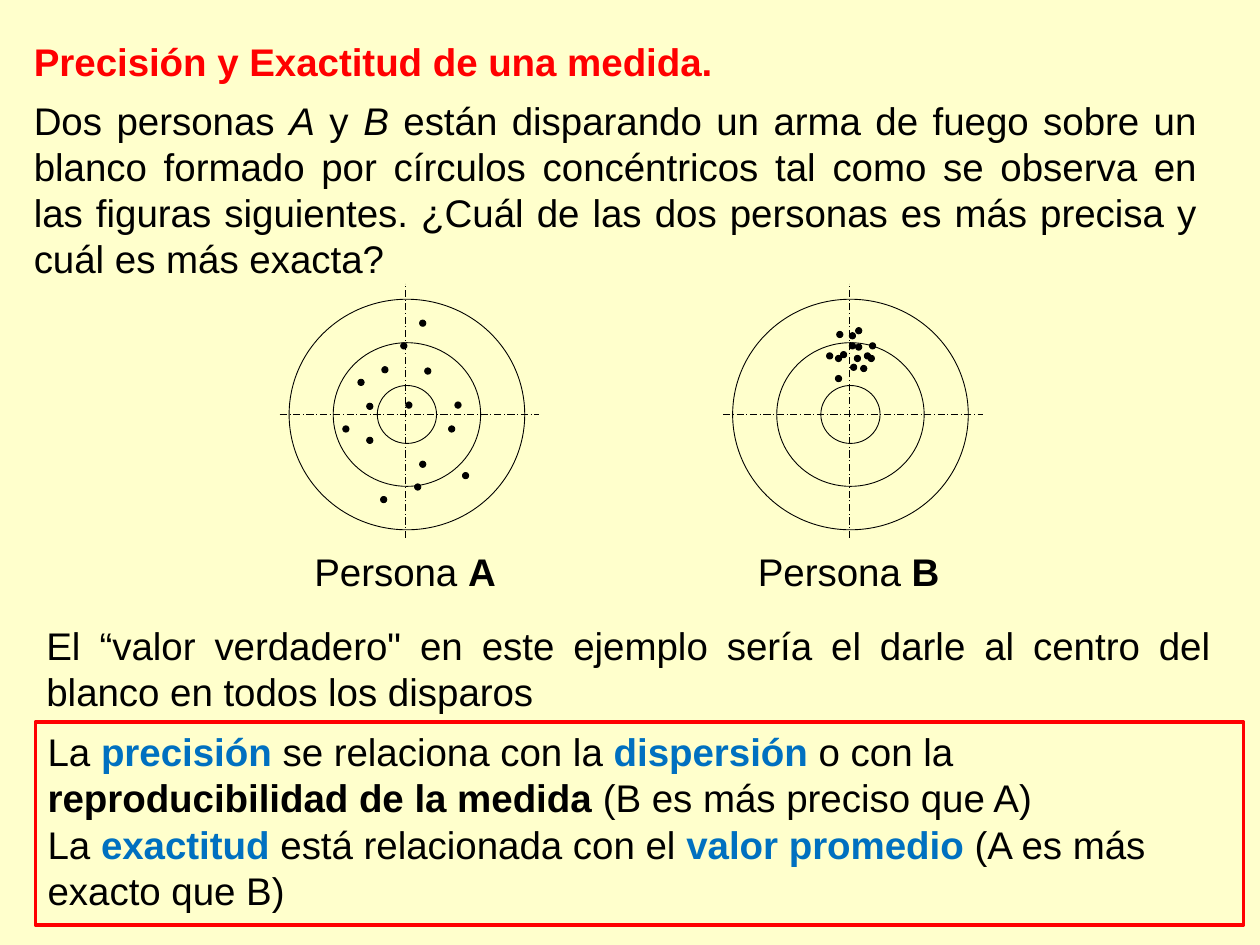
from lxml.etree import SubElement
from pptx import Presentation
from pptx.dml.color import RGBColor
from pptx.enum.dml import MSO_LINE_DASH_STYLE as Dash
from pptx.enum.shapes import MSO_CONNECTOR_TYPE as Connector, MSO_SHAPE as Shape
from pptx.enum.text import MSO_AUTO_SIZE as AutoSize, PP_ALIGN as Align
from pptx.oxml.ns import qn
from pptx.util import Inches, Pt

COLORS = {"paper": "FFFFCC", "ink": "000000", "red": "FF0000", "blue": "0070C0"}
PLAIN, BOLD, ITALIC = ("ink", False, False), ("ink", True, False), ("ink", False, True)
TITLE, KEY = ("red", True, False), ("blue", True, False)

INTRO = [
    ("Dos personas ", PLAIN), ("A", ITALIC), (" y ", PLAIN), ("B", ITALIC),
    (" están disparando un arma de fuego sobre un blanco formado por círculos "
     "concéntricos tal como se observa en las figuras siguientes. ¿Cuál de las dos "
     "personas es más precisa y cuál es más exacta?", PLAIN),
]
TRUE_VALUE = [("El “valor verdadero\" en este ejemplo sería el darle al centro del "
               "blanco en todos los disparos", PLAIN)]
CONCLUSIONS = [
    [("La ", PLAIN), ("precisión ", KEY), ("se relaciona con la ", PLAIN),
     ("dispersión ", KEY), ("o con la ", PLAIN),
     ("reproducibilidad de la medida ", BOLD), ("(B es más preciso que A)", PLAIN)],
    [("La ", PLAIN), ("exactitud", KEY), (" está relacionada con el ", PLAIN),
     ("valor promedio ", KEY), ("(A es más exacto que B)", PLAIN)],
]
SHOTS_A = [
    (1.00, 0.94), (1.39, 0.94), (1.34, 1.13), (1.11, 1.41), (1.07, 1.59),
    (1.45, 1.50), (0.80, 1.69), (0.69, 1.22), (0.50, 1.13), (0.69, 0.95),
    (0.62, 0.76), (0.81, 0.66), (0.96, 0.47), (1.15, 0.67), (1.11, 0.29),
]
SHOTS_B = [
    (0.89, 0.73), (1.01, 0.64), (1.09, 0.65), (1.04, 0.57), (0.89, 0.57),
    (0.82, 0.55), (0.93, 0.54), (1.12, 0.55), (1.15, 0.57), (1.16, 0.47),
    (1.05, 0.48), (1.00, 0.47), (1.00, 0.39), (1.05, 0.35), (0.90, 0.38),
]
RINGS = [(0.47, 0.46), (1.17, 1.14), (1.87, 1.83)]
CENTER_X, CENTER_Y = 1.01, 1.04
AXIS_WIDTH, AXIS_HEIGHT = 2.06, 2.02
SHOT_SIZE = 0.05


def color(name):
    """Return the named palette colour."""
    return RGBColor.from_string(COLORS[name])


def add_text(shapes, left, top, width, height, paragraphs, align=Align.LEFT, inset=True):
    """Place a text box built from paragraphs of styled runs."""
    box = shapes.add_textbox(Inches(left), Inches(top), Inches(width), Inches(height))
    frame = box.text_frame
    frame.word_wrap = True
    if inset:
        frame.auto_size = AutoSize.SHAPE_TO_FIT_TEXT
    else:
        frame.margin_left = frame.margin_right = 0
        frame.margin_top = frame.margin_bottom = 0
    for index, runs in enumerate(paragraphs):
        para = frame.add_paragraph() if index else frame.paragraphs[0]
        para.alignment = align
        for text, (ink, bold, italic) in runs:
            span = para.add_run()
            span.text = text
            font = span.font
            font.name, font.size = "Arial", Pt(22)
            font.bold, font.italic = bold, italic
            font.color.rgb = color(ink)


def add_outline(shapes, kind, left, top, width, height, ink="ink", weight=0.5, filled=False):
    """Place a preset shape with a coloured outline."""
    shape = shapes.add_shape(kind, Inches(left), Inches(top), Inches(width), Inches(height))
    shape.shadow.inherit = False
    if filled:
        shape.fill.solid()
        shape.fill.fore_color.rgb = color(ink)
    else:
        shape.fill.background()
    shape.line.color.rgb = color(ink)
    shape.line.width = Pt(weight)


def add_axis(shapes, x1, y1, x2, y2):
    """Place one dash-dot axis line."""
    axis = shapes.add_connector(
        Connector.STRAIGHT, Inches(x1), Inches(y1), Inches(x2), Inches(y2))
    axis.line.color.rgb = color("ink")
    axis.line.width = Pt(0.5)
    axis.line.dash_style = Dash.LONG_DASH_DOT
    SubElement(axis.element.spPr, qn("a:effectLst"))


def add_target(page, left, top, person, shots):
    """Place a target with its rings, axes, shots and label."""
    shapes = page.shapes.add_group_shape().shapes
    middle_x, middle_y = left + CENTER_X, top + CENTER_Y
    for width, height in RINGS:
        add_outline(shapes, Shape.OVAL, middle_x - width / 2, middle_y - height / 2,
                    width, height)
    add_axis(shapes, left, middle_y, left + AXIS_WIDTH, middle_y)
    add_axis(shapes, left + 1, top + AXIS_HEIGHT, left + 1, top)
    for x, y in shots:
        add_outline(shapes, Shape.OVAL, left + x, top + y, SHOT_SIZE, SHOT_SIZE, filled=True)
    add_text(shapes, left + 0.04, top + 2.1, 1.91, 0.39,
             [[("Persona ", PLAIN), (person, BOLD)]], Align.CENTER, inset=False)


def add_question(page, left, top, width):
    """Place the heading and the question below it."""
    add_text(page.shapes, left, top, width, 0.47,
             [[("Precisión y Exactitud de una medida.", TITLE)]])
    add_text(page.shapes, left, top + 0.47, width - 0.12, 1.58, [INTRO], Align.JUSTIFY)


def add_answer(page, left, top, width):
    """Place the true value sentence and the framed conclusions."""
    add_text(page.shapes, left, top, 9.44, 0.84, [TRUE_VALUE], Align.JUSTIFY)
    add_text(page.shapes, left + 0.01, top + 0.84, 9.37, 1.58, CONCLUSIONS)
    add_outline(page.shapes, Shape.RECTANGLE, left + 0.01, top + 0.84, width, 1.61, "red", 2)


def main():
    """Build and save the slide."""
    deck = Presentation()
    deck.slide_width, deck.slide_height = Inches(10), Inches(7.5)
    page = deck.slides.add_slide(deck.slide_layouts[6])
    page.background.fill.solid()
    page.background.fill.fore_color.rgb = color("paper")
    add_question(page, 0.17, 0.25, 9.55)
    add_target(page, 2.22, 2.25, "A", SHOTS_A)
    add_target(page, 5.74, 2.25, "B", SHOTS_B)
    add_answer(page, 0.27, 4.89, 9.59)
    deck.save("out.pptx")


if __name__ == "__main__":
    main()
